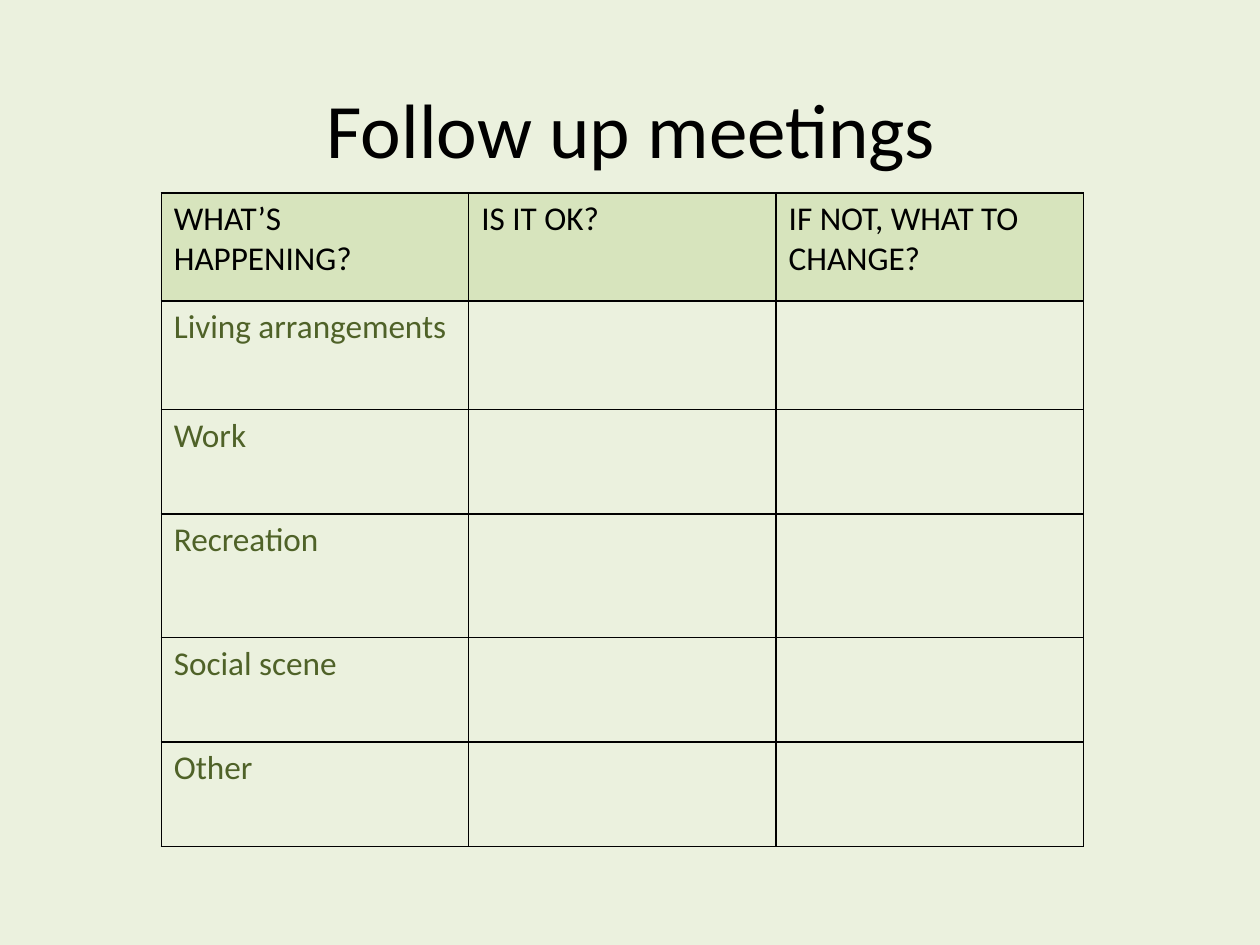
from lxml.etree import SubElement
from pptx import Presentation
from pptx.dml.color import RGBColor
from pptx.enum.text import MSO_ANCHOR, PP_ALIGN
from pptx.oxml.ns import qn
from pptx.util import Inches, Pt

COLORS = {"back": "EBF1DE", "head": "D7E4BD", "ink": "000000", "label": "4F6228"}
FONT = "Calibri"
HEADS = ["WHAT’S HAPPENING?", "IS IT OK?", "IF NOT, WHAT TO CHANGE?"]
TOPICS = ["Living arrangements", "Work", "Recreation", "Social scene", "Other"]
HEIGHTS = [0.86, 0.86, 0.83, 0.98, 0.83, 0.83]
WIDTH = 2.44


class Deck:
    """Holds the style and the current slide."""

    def __init__(self):
        self.file = Presentation()
        self.file.slide_width, self.file.slide_height = Inches(10), Inches(7.5)
        self.slide = self.file.slides.add_slide(self.file.slide_layouts[5])
        fill = self.slide.background.fill
        fill.solid()
        fill.fore_color.rgb = self.color("back")

    def color(self, name):
        return RGBColor.from_string(COLORS[name])

    def label(self, frame, text, size, color, align=PP_ALIGN.LEFT):
        frame.text = text
        for para in frame.paragraphs:
            para.alignment = align
            para.font.size = Pt(size)
            for run in para.runs:
                run.font.name = FONT
                run.font.size = Pt(size)
                run.font.bold = False
                run.font.color.rgb = self.color(color)

    def title(self, text, left, top, width, height):
        shape = self.slide.shapes.title
        shape.left, shape.top = Inches(left), Inches(top)
        shape.width, shape.height = Inches(width), Inches(height)
        shape.text_frame.vertical_anchor = MSO_ANCHOR.MIDDLE
        self.label(shape.text_frame, text, 44, "ink", PP_ALIGN.CENTER)

    def border(self, cell):
        props = cell._tc.get_or_add_tcPr()
        for index, side in enumerate(("lnL", "lnR", "lnT", "lnB")):
            line = SubElement(props, qn(f"a:{side}"), w=str(Pt(1)))
            props.insert(index, line)
            fill = SubElement(line, qn("a:solidFill"))
            SubElement(fill, qn("a:srgbClr"), val=COLORS["ink"])

    def table(self, rows, left, top, width, heights):
        count = len(rows[0])
        frame = self.slide.shapes.add_table(
            len(rows), count, Inches(left), Inches(top),
            Inches(width * count), Inches(sum(heights)))
        grid = frame.table
        grid.horz_banding = False
        for col in grid.columns:
            col.width = Inches(width)
        for index, (texts, height) in enumerate(zip(rows, heights)):
            grid.rows[index].height = Inches(height)
            for cell, text in zip(grid.rows[index].cells, texts):
                self.label(cell.text_frame, text, 19, "label" if index else "ink")
                if index:
                    cell.fill.background()
                else:
                    cell.fill.solid()
                    cell.fill.fore_color.rgb = self.color("head")
                self.border(cell)


def main():
    deck = Deck()
    deck.title("Follow up meetings", 0.51, 0.55, 9, 0.93)
    rows = [HEADS] + [[topic, "", ""] for topic in TOPICS]
    deck.table(rows, 1.28, 1.53, WIDTH, HEIGHTS)
    deck.file.save("out.pptx")


if __name__ == "__main__":
    main()
